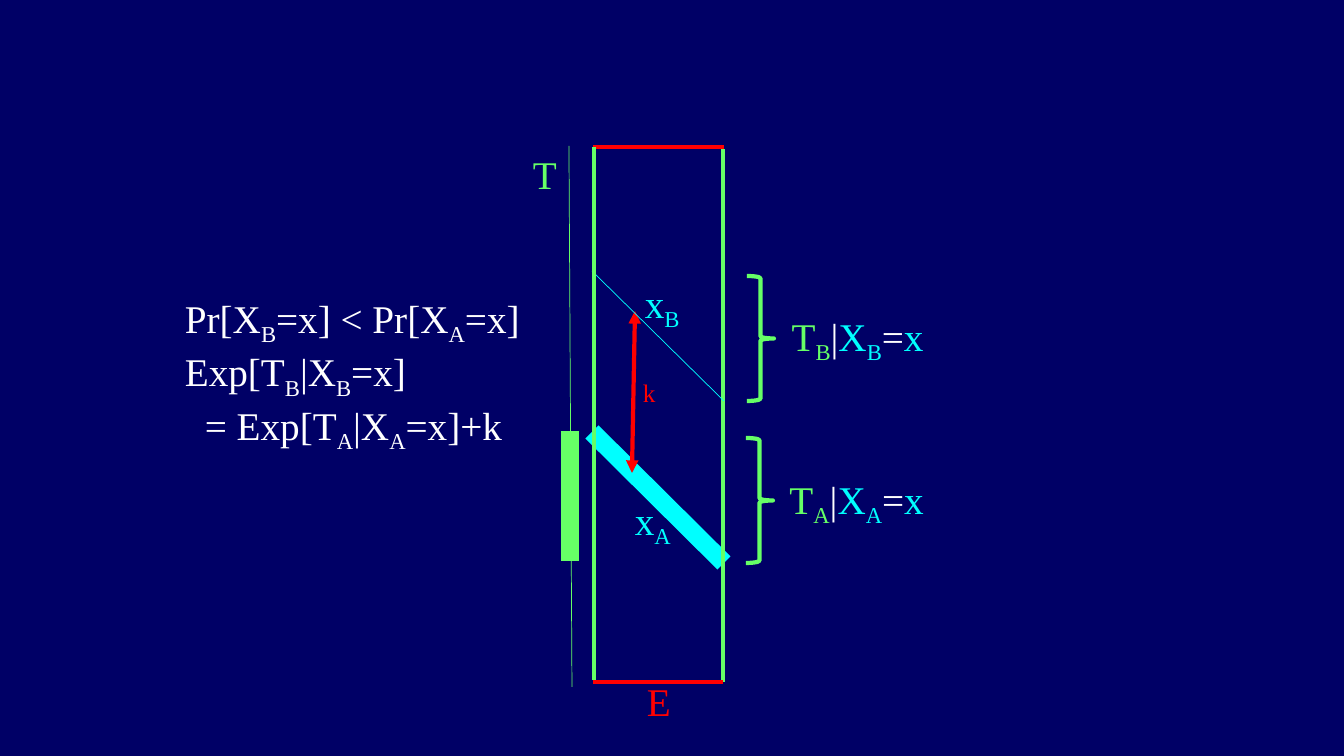
from lxml import etree
from pptx import Presentation
from pptx.dml.color import RGBColor
from pptx.enum.shapes import MSO_CONNECTOR, MSO_SHAPE
from pptx.enum.text import MSO_AUTO_SIZE, PP_ALIGN
from pptx.oxml.ns import qn
from pptx.util import Emu, Pt

STRAIGHT = MSO_CONNECTOR.STRAIGHT
RIGHT_BRACE = MSO_SHAPE.RIGHT_BRACE
GROW = MSO_AUTO_SIZE.SHAPE_TO_FIT_TEXT
LEFT, CENTER = PP_ALIGN.LEFT, PP_ALIGN.CENTER

NAVY = RGBColor(0x00, 0x00, 0x66)
GREEN = RGBColor(0x66, 0xFF, 0x66)
CYAN = RGBColor(0x00, 0xFF, 0xFF)
RED = RGBColor(0xFF, 0x00, 0x00)
WHITE = RGBColor(0xFF, 0xFF, 0xFF)

FONT = "Times New Roman"
HEAVY, MEDIUM, HAIR = 13.25, 3, 0.5
EMU_PER_INCH, PX_PER_INCH = 914400, 100.8

# start x, y, end x, y, colour, width in points, arrowheads
LINES = [
    (592, 432, 724, 563, CYAN, HEAVY, False),
    (635, 311, 632, 473, RED, MEDIUM, True),
    (723, 149, 723, 682, GREEN, MEDIUM, False),
    (572, 687, 569, 146, GREEN, HAIR, False),
    (570, 561, 570, 431, GREEN, HEAVY, False),
    (593, 147, 724, 147, RED, MEDIUM, False),
    (593, 682, 723, 682, RED, MEDIUM, False),
    (592, 271, 724, 401, CYAN, HAIR, False),
    (594, 147, 594, 680, GREEN, MEDIUM, False),
]

# left, top, width, height
BRACES = [(746, 438, 27, 125), (747, 276, 27, 125)]

# left, top, width, height, text, colour, size in points; _ lowers the next letter
LABELS = [
    (523, 145, 62, 57, "T", RED and GREEN, 28),
    (637, 672, 62, 57, "E", RED, 28),
    (635, 274, 76, 57, "x_B", CYAN, 28),
    (625, 491, 76, 57, "x_A", CYAN, 28),
    (633, 372, 33, 40, "k", RED, 18),
]

FORMULAS_BOX = (175, 289, 399, 152)
# text, indent
FORMULAS = [
    ("Pr[X_B=x] < Pr[X_A=x]", 0),
    ("Exp[T_B|X_B=x]", 0),
    ("= Exp[T_A|X_A=x]+k", 20),
]

# left, top, width, height, letter
CONDITIONALS = [(754, 470, 215, 57, "A"), (755, 307, 215, 57, "B")]


def px(length):
    return Emu(round(length * EMU_PER_INCH / PX_PER_INCH))


def add_line(slide, x1, y1, x2, y2, colour, width, arrows):
    connector = slide.shapes.add_connector(STRAIGHT, px(x1), px(y1), px(x2), px(y2))
    connector.line.color.rgb = colour
    connector.line.width = Pt(width)
    if arrows:
        outline = connector.line._get_or_add_ln()
        for end in ("a:headEnd", "a:tailEnd"):
            etree.SubElement(outline, qn(end)).set("type", "triangle")
    etree.SubElement(connector._element.spPr, qn("a:effectLst"))


def add_brace(slide, box):
    brace = slide.shapes.add_shape(RIGHT_BRACE, *map(px, box))
    brace.shadow.inherit = False
    brace.fill.background()
    brace.line.color.rgb = GREEN
    brace.line.width = Pt(MEDIUM)


def add_runs(paragraph, text, colour=None):
    """Split text at each _ and set the letter after it as a subscript."""
    first, *lowered = text.split("_")
    pieces = [(first, False)]
    for piece in lowered:
        pieces += [(piece[0], True), (piece[1:], False)]
    for piece, is_subscript in pieces:
        if not piece:
            continue
        run = paragraph.add_run()
        run.text = piece
        if colour is not None:
            run.font.color.rgb = colour
        if is_subscript:
            run._r.get_or_add_rPr().set("baseline", "-25000")


def add_text(slide, box, paragraphs, size, align=LEFT, wrap=True):
    """Write paragraphs, each a list of (text, colour) parts and an indent."""
    frame = slide.shapes.add_textbox(*map(px, box)).text_frame
    frame.word_wrap = wrap
    frame.auto_size = GROW
    for index, (parts, indent) in enumerate(paragraphs):
        paragraph = frame.add_paragraph() if index else frame.paragraphs[0]
        paragraph.alignment = align
        paragraph.font.name = FONT
        paragraph.font.size = Pt(size)
        if indent:
            paragraph._p.get_or_add_pPr().set("marL", str(px(indent)))
        same_colour = len(parts) == 1
        if same_colour:
            paragraph.font.color.rgb = parts[0][1]
        for text, colour in parts:
            add_runs(paragraph, text, None if same_colour else colour)


def main():
    presentation = Presentation()
    presentation.slide_width, presentation.slide_height = px(1344), px(756)
    slide = presentation.slides.add_slide(presentation.slide_layouts[6])
    slide.background.fill.solid()
    slide.background.fill.fore_color.rgb = NAVY

    for line in LINES:
        add_line(slide, *line)
    for box in BRACES:
        add_brace(slide, box)
    for *box, text, colour, size in LABELS:
        add_text(slide, box, [([(text, colour)], 0)], size, wrap=text != "k")
    add_text(slide, FORMULAS_BOX,
             [([(text, WHITE)], indent) for text, indent in FORMULAS], 28)
    for *box, letter in CONDITIONALS:
        parts = [(f"T_{letter}", GREEN), ("|", WHITE), (f"X_{letter}", CYAN),
                 ("=", WHITE), ("x ", CYAN)]
        add_text(slide, box, [(parts, 0)], 28, align=CENTER)

    presentation.save("out.pptx")


if __name__ == "__main__":
    main()
